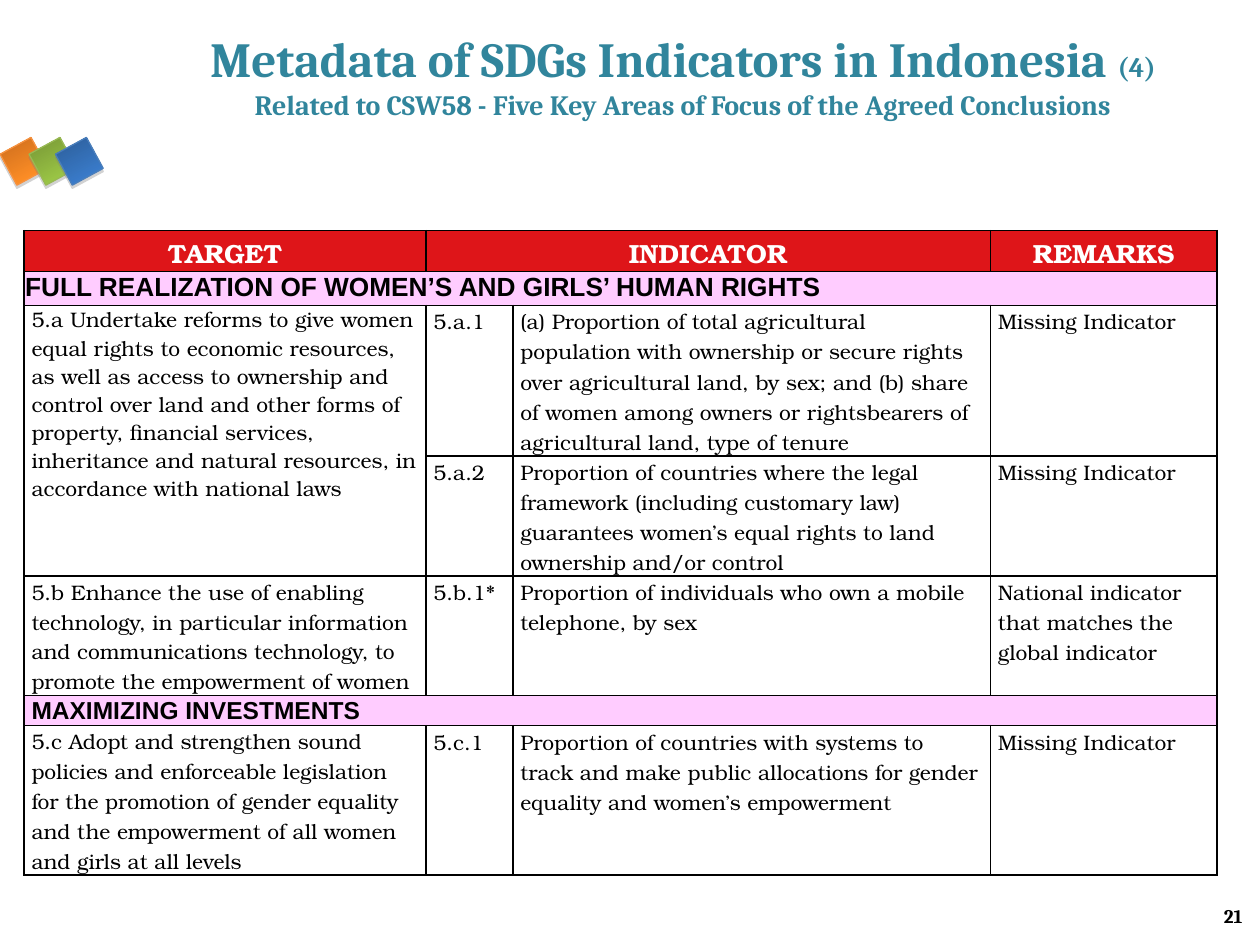
from dataclasses import dataclass

import lxml.etree
import pptx
import pptx.dml.color
import pptx.enum.shapes
import pptx.enum.text
import pptx.oxml
import pptx.oxml.ns
import pptx.util
from pptx.util import Inches, Pt

COLORS = {
    "title": "31859C", "black": "000000", "white": "FFFFFF",
    "header": "DE1519", "section": "FFCCFF", "shadow": "808080",
}
BODY_FONT = "TeX Gyre Bonum"
ALIGN = pptx.enum.text.PP_ALIGN
MIDDLE = pptx.enum.text.MSO_ANCHOR.MIDDLE


@dataclass
class Tile:
    left: float
    light: str
    dark: str
    edge: str


@dataclass
class CellStyle:
    size: float = 12
    font: str = BODY_FONT
    bold: bool = False
    color: str = COLORS["black"]
    fill: str | None = None
    inset: float = 0.06
    spacing: float = 1.07
    centered: bool = False


@dataclass
class Entry:
    row: int
    column: int
    text: str
    style: CellStyle
    rows: int = 1
    columns: int = 1


HEADER = CellStyle(15, bold=True, color=COLORS["white"], fill=COLORS["header"],
                   inset=0.01, centered=True)
WIDE_SECTION = CellStyle(15, "Arial", True, fill=COLORS["section"], inset=0.01, spacing=1.06)
SECTION = CellStyle(14, "Arial", True, fill=COLORS["section"], spacing=1.06)
TIGHT_TARGET = CellStyle(spacing=1)
TARGET = CellStyle(spacing=1.06)
DETAIL = CellStyle()

TILES = [
    Tile(0.05, "FF8F26", "CB6C1D", "F69240"),
    Tile(0.28, "9CC746", "769535", "98B954"),
    Tile(0.49, "3A7CCB", "2C5D98", "4A7EBB"),
]
COLUMN_WIDTHS = [3.19, 0.69, 3.79, 1.8]
ROW_HEIGHTS = [0.27, 0.27, 1.07, 0.86, 0.85, 0.24, 1.06]
HEADINGS_AND_TARGETS = [
    Entry(0, 0, "TARGET", HEADER),
    Entry(0, 1, "INDICATOR", HEADER, columns=2),
    Entry(0, 3, "REMARKS", HEADER),
    Entry(1, 0, "FULL REALIZATION OF WOMEN’S AND GIRLS’ HUMAN RIGHTS",
          WIDE_SECTION, columns=4),
    Entry(2, 0, "5.a Undertake reforms to give women equal rights to economic resources, "
          "as well as access to ownership and control over land and other forms of property, "
          "financial services, inheritance and natural resources, in accordance with "
          "national laws", TIGHT_TARGET, rows=2),
    Entry(4, 0, "5.b Enhance the use of enabling technology, in particular information and "
          "communications technology, to promote the empowerment of women", TARGET),
    Entry(5, 0, "MAXIMIZING INVESTMENTS", SECTION, columns=4),
    Entry(6, 0, "5.c Adopt and strengthen sound policies and enforceable legislation for the "
          "promotion of gender equality and the empowerment of all women and girls at all "
          "levels", TARGET),
]
INDICATORS = {
    2: ("5.a.1", "(a) Proportion of total agricultural population with ownership or secure "
        "rights over agricultural land, by sex; and (b) share of women among owners or "
        "rightsbearers of agricultural land, type of tenure", "Missing Indicator"),
    3: ("5.a.2", "Proportion of countries where the legal framework (including customary law) "
        "guarantees women’s equal rights to land ownership and/or control",
        "Missing Indicator"),
    4: ("5.b.1*", "Proportion of individuals who own a mobile telephone, by sex",
        "National indicator that matches the global indicator"),
    6: ("5.c.1", "Proportion of countries with systems to track and make public allocations "
        "for gender equality and women’s empowerment", "Missing Indicator"),
}


def rgb(code: str) -> pptx.dml.color.RGBColor:
    return pptx.dml.color.RGBColor.from_string(code)


def add_run(paragraph, text: str, size: float, font: str, color: str, bold: bool) -> None:
    run = paragraph.add_run()
    run.text = text
    run.font.size = Pt(size)
    run.font.name = font
    run.font.bold = bold
    run.font.color.rgb = rgb(color)


def add_tile(slide, tile: Tile) -> None:
    square = slide.shapes.add_shape(
        pptx.enum.shapes.MSO_SHAPE.RECTANGLE,
        Inches(tile.left), Inches(1.14), Inches(0.28), Inches(0.28))
    square.rotation = 151.5
    square.fill.gradient()
    square.fill.gradient_angle = 270
    for stop, color, position in zip(
            square.fill.gradient_stops, (tile.light, tile.dark), (0.2, 1)):
        stop.color.rgb = rgb(color)
        stop.position = position
    square.line.color.rgb = rgb(tile.edge)
    square.line.width = Pt(0.75)
    square.shadow.inherit = False
    effects = square.element.spPr.find(pptx.oxml.ns.qn("a:effectLst"))
    effects.append(pptx.oxml.parse_xml(
        f'<a:outerShdw {pptx.oxml.ns.nsdecls("a")} blurRad="0" dist="{Pt(1.8)}" '
        f'dir="5400000" rotWithShape="0"><a:srgbClr val="{COLORS["shadow"]}">'
        '<a:alpha val="35000"/></a:srgbClr></a:outerShdw>'))


def add_borders(cell) -> None:
    """Outline all four sides; borders must precede the fill in the cell properties."""
    properties = cell._tc.get_or_add_tcPr()
    for index, side in enumerate(("lnL", "lnR", "lnT", "lnB")):
        properties.insert(index, pptx.oxml.parse_xml(
            f'<a:{side} {pptx.oxml.ns.nsdecls("a")} w="{Pt(1)}"><a:solidFill>'
            f'<a:srgbClr val="{COLORS["black"]}"/></a:solidFill></a:{side}>'))


def fill_entry(table, entry: Entry) -> None:
    style = entry.style
    cell = table.cell(entry.row, entry.column)
    if entry.rows > 1 or entry.columns > 1:
        cell.merge(table.cell(entry.row + entry.rows - 1, entry.column + entry.columns - 1))
    cell.margin_left = cell.margin_right = Inches(style.inset)
    cell.margin_top = cell.margin_bottom = 0
    if style.fill:
        cell.fill.solid()
        cell.fill.fore_color.rgb = rgb(style.fill)
    paragraph = cell.text_frame.paragraphs[0]
    paragraph.line_spacing = style.spacing
    if style.centered:
        cell.vertical_anchor = MIDDLE
        paragraph.alignment = ALIGN.CENTER
    add_run(paragraph, entry.text, style.size, style.font, style.color, style.bold)


def add_indicator_table(slide) -> None:
    table = slide.shapes.add_table(
        len(ROW_HEIGHTS), len(COLUMN_WIDTHS), Inches(0.19), Inches(1.83),
        Inches(sum(COLUMN_WIDTHS)), Inches(sum(ROW_HEIGHTS))).table
    table.first_row = table.horz_banding = False
    for column, width in zip(table.columns, COLUMN_WIDTHS):
        column.width = Inches(width)
    for row, height in zip(table.rows, ROW_HEIGHTS):
        row.height = Inches(height)
    for cell in table.iter_cells():
        cell.fill.background()
        add_borders(cell)
    details = [Entry(row, column, text, DETAIL)
               for row, texts in INDICATORS.items()
               for column, text in enumerate(texts, start=1)]
    for entry in HEADINGS_AND_TARGETS + details:
        fill_entry(table, entry)


def add_text_line(slide, left: float, top: float, width: float, height: float, alignment):
    """Add a wrapped, vertically centred box and return its first paragraph."""
    frame = slide.shapes.add_textbox(
        Inches(left), Inches(top), Inches(width), Inches(height)).text_frame
    frame.word_wrap = True
    frame.vertical_anchor = MIDDLE
    paragraph = frame.paragraphs[0]
    paragraph.alignment = alignment
    return paragraph


def main() -> None:
    deck = pptx.Presentation()
    deck.slide_width, deck.slide_height = Inches(10), Inches(7.5)
    slide = deck.slides.add_slide(deck.slide_layouts[6])
    for tile in TILES:
        add_tile(slide, tile)
    add_indicator_table(slide)
    page_number = add_text_line(slide, 7.63, 7.07, 2.33, 0.4, ALIGN.RIGHT)
    add_run(page_number, "21", 11, "Cambria", COLORS["black"], True)
    title = add_text_line(slide, 1, 0.33, 8.84, 0.53, ALIGN.CENTER)
    add_run(title, "Metadata of SDGs Indicators in Indonesia ", 28, "Cambria",
            COLORS["title"], True)
    add_run(title, "(4)", 16, "Cambria", COLORS["title"], True)
    title.add_line_break()
    add_run(title, "Related to CSW58 - Five Key Areas of Focus of the Agreed Conclusions",
            16, "Cambria", COLORS["title"], True)
    deck.save("out.pptx")


if __name__ == "__main__":
    main()
